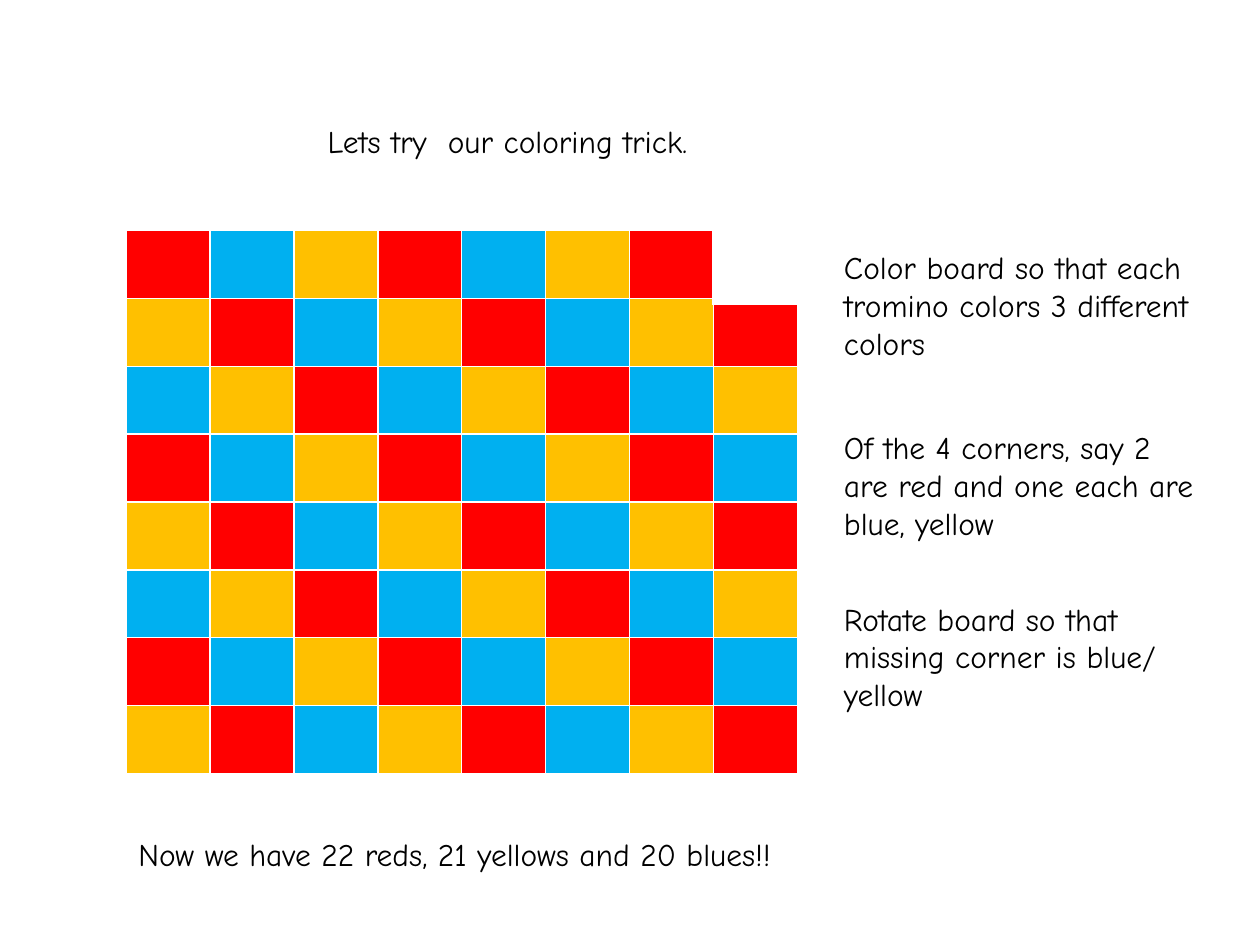
import pptx
import pptx.dml.color
import pptx.enum.text
import pptx.oxml.ns
import pptx.util
from lxml import etree

Inches = pptx.util.Inches
Pt = pptx.util.Pt

COLORS = {"red": "FF0000", "blue": "00B0F0", "yellow": "FFC000",
          "white": "FFFFFF", "black": "000000"}
CYCLE = ("red", "blue", "yellow")
SIZE = 8
NOTES = (
    (1.92, "Color board so that each tromino colors 3 different colors"),
    (3.35, "Of the 4 corners, say 2 are red and one each are blue, yellow"),
    (4.71, "Rotate board so that missing corner is blue/ yellow"),
)


def rgb(name):
    return pptx.dml.color.RGBColor.from_string(COLORS[name])


def put_text(shape, text, at, size=18, font="Comic Neue", color="black", wrap=True):
    """Place a text box or placeholder and fill it with formatted text."""
    shape.left, shape.top, shape.width, shape.height = map(Inches, at)
    frame = shape.text_frame
    frame.word_wrap = wrap
    frame.auto_size = pptx.enum.text.MSO_AUTO_SIZE.SHAPE_TO_FIT_TEXT
    frame.vertical_anchor = pptx.enum.text.MSO_ANCHOR.TOP
    line = frame.paragraphs[0]
    line.alignment = pptx.enum.text.PP_ALIGN.LEFT
    run = line.add_run()
    run.text = text
    run.font.size = Pt(size)
    run.font.name = font
    run.font.color.rgb = rgb(color)


def add_box(slide, text, at, **style):
    put_text(slide.shapes.add_textbox(0, 0, 0, 0), text, at, **style)


def paint(cell, color, base=1):
    """Fill a cell and give it white borders; base is the bottom width."""
    qn = pptx.oxml.ns.qn
    props = cell._tc.get_or_add_tcPr()
    for side, width in (("L", 1), ("R", 1), ("T", 1), ("B", base)):
        edge = etree.SubElement(props, qn("a:ln" + side), w=str(Pt(width)))
        fill = etree.SubElement(edge, qn("a:solidFill"))
        etree.SubElement(fill, qn("a:srgbClr"), val=COLORS["white"])
    cell.fill.solid()
    cell.fill.fore_color.rgb = rgb(color)


def add_grid(slide, count, at):
    """Add a square table of count by count cells."""
    table = slide.shapes.add_table(count, count, *map(Inches, at)).table
    table.first_row = table.horz_banding = False
    return table


def add_board(slide):
    table = add_grid(slide, SIZE, (1, 1.83, 5.33, 4.31))
    for row in range(SIZE):
        for col in range(SIZE):
            paint(table.cell(row, col), CYCLE[(col - row) % len(CYCLE)])


def hide_corner(slide):
    table = add_grid(slide, 1, (5.66, 1.81, 0.67, 0.59))
    paint(table.cell(0, 0), "white", base=3)


def main():
    deck = pptx.Presentation()
    deck.slide_width, deck.slide_height = Inches(10), Inches(7.5)
    slide = deck.slides.add_slide(deck.slide_layouts.get_by_name("Title Only"))
    add_board(slide)
    put_text(slide.shapes.title, "Lets try  our coloring trick.",
             (2.5, 0.92, 3.49, 0.4), wrap=False)
    for top, note in NOTES:
        add_box(slide, note, (6.6, top, 3.06, 1.01))
    add_box(slide, "Now we have 22 reds, 21 yellows and 20 blues!!",
            (1, 6.58, 5.7, 0.4), wrap=False)
    hide_corner(slide)
    deck.save("out.pptx")


if __name__ == "__main__":
    main()
